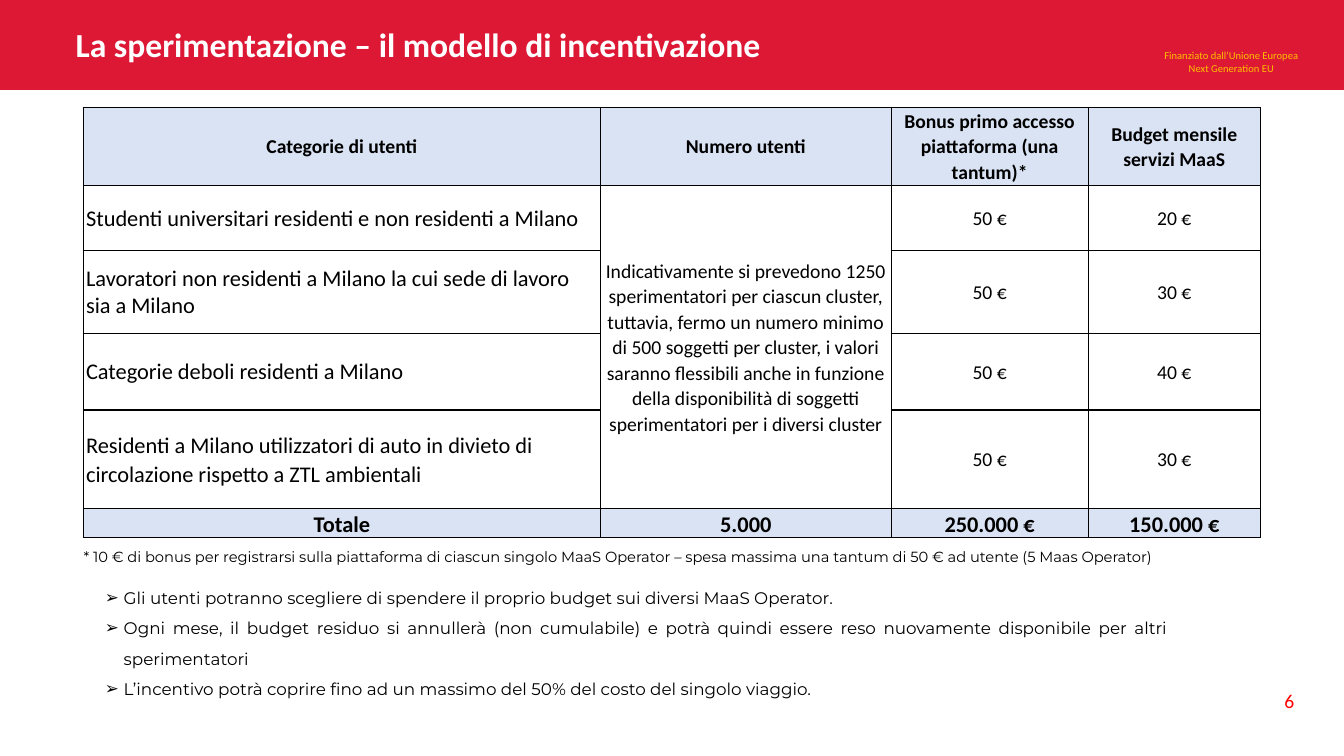
import pptx
import pptx.util
import pptx.dml.color
import pptx.enum.shapes
import pptx.enum.text
import pptx.oxml
import pptx.oxml.ns

Pt = pptx.util.Pt
ALIGN = pptx.enum.text.PP_ALIGN
MIDDLE = pptx.enum.text.MSO_ANCHOR.MIDDLE
RED, BLUE, WHITE, BLACK = "DD1835", "DAE3F3", "FFFFFF", "000000"

HEAD = ["Categorie di utenti", "Numero utenti",
        "Bonus primo accesso piattaforma (una tantum)*",
        "Budget mensile servizi MaaS"]
USERS = ("Indicativamente si prevedono 1250 sperimentatori per ciascun cluster, "
         "tuttavia, fermo un numero minimo di 500 soggetti per cluster, i valori "
         "saranno flessibili anche in funzione della disponibilità di soggetti "
         "sperimentatori per i diversi cluster")
BODY = [
    ["Studenti universitari residenti e non residenti a Milano", USERS, "50 €", "20 €"],
    ["Lavoratori non residenti a Milano la cui sede di lavoro sia a Milano",
     "", "50 €", "30 €"],
    ["Categorie deboli residenti a Milano", "", "50 €", "40 €"],
    ["Residenti a Milano utilizzatori di auto in divieto di circolazione "
     "rispetto a ZTL ambientali", "", "50 €", "30 €"],
]
TOTAL = ["Totale", "5.000", "250.000 €", "150.000 €"]
WIDTHS = [369.4, 207.7, 140.7, 123.1]
HEIGHTS = [15.4, 55.6, 46.8, 59, 54.7, 70.6, 20.2]
NOTE = ("* 10 € di bonus per registrarsi sulla piattaforma di ciascun singolo MaaS "
        "Operator – spesa massima una tantum di 50 € ad utente (5 Maas Operator)")
POINTS = [
    "Gli utenti potranno scegliere di spendere il proprio budget sui diversi MaaS Operator.",
    "Ogni mese, il budget residuo si annullerà (non cumulabile) e potrà quindi "
    "essere reso nuovamente disponibile per altri sperimentatori",
    "L’incentivo potrà coprire fino ad un massimo del 50% del costo del singolo viaggio.",
]


def color(code):
    return pptx.dml.color.RGBColor.from_string(code)


def paint(item, code):
    item.fill.solid()
    item.fill.fore_color.rgb = color(code)


def bullet(para):
    props = para._p.get_or_add_pPr()
    props.set("marL", str(Pt(13.5)))
    props.set("indent", str(-Pt(13.5)))
    space = pptx.oxml.ns.nsdecls("a")
    props.append(pptx.oxml.parse_xml(f'<a:buFont {space} typeface="Arial"/>'))
    props.append(pptx.oxml.parse_xml(f'<a:buChar {space} char="➢"/>'))


def write(frame, lines, size, code, align, font="Calibri", bold=False,
          spacing=None, marked=False):
    frame.word_wrap = True
    frame.text = "\n".join(lines)
    for para in frame.paragraphs:
        para.alignment = align
        if spacing:
            para.line_spacing = spacing
        if marked:
            bullet(para)
        para.font.name = font
        para.font.size = Pt(size)
        para.font.bold = bold
        para.font.color.rgb = color(code)


def place(shape, left, top, width, height):
    shape.left, shape.top = Pt(left), Pt(top)
    shape.width, shape.height = Pt(width), Pt(height)


def add_text(slide, box, lines, size, code, align, inset=True, **style):
    frame = slide.shapes.add_textbox(*map(Pt, box)).text_frame
    if not inset:
        frame.margin_left = frame.margin_right = 0
        frame.margin_top = frame.margin_bottom = 0
    write(frame, lines, size, code, align, **style)


def add_title(slide, text):
    title = slide.shapes.title
    place(title, 46.8, 16.5, 720, 33)
    title.text_frame.vertical_anchor = MIDDLE
    write(title.text_frame, [text], 24, WHITE, ALIGN.LEFT, bold=True, spacing=0.9)


def add_band(slide):
    """Draw the red strip behind the title."""
    band = slide.shapes.add_shape(
        pptx.enum.shapes.MSO_SHAPE.RECTANGLE, 0, Pt(-2), Pt(960), Pt(66.2))
    band.shadow.inherit = False
    band.line.fill.background()
    paint(band, RED)
    slide.shapes.title.element.addprevious(band.element)


def border(cell, sides):
    """Rule the given sides in black and leave the others bare."""
    props = cell._tc.get_or_add_tcPr()
    ink = f'<a:solidFill><a:srgbClr val="{BLACK}"/></a:solidFill>'
    for side in "LRTB":
        line = ink if side in sides else "<a:noFill/>"
        props.append(pptx.oxml.parse_xml(
            f'<a:ln{side} {pptx.oxml.ns.nsdecls("a")} w="{Pt(1)}">{line}</a:ln{side}>'))


def tighten(cell):
    cell.margin_left = cell.margin_right = Pt(2)
    cell.margin_top = cell.margin_bottom = 0
    cell.vertical_anchor = MIDDLE


def fill_cell(cell, text, size, code, align, bold, spacing):
    tighten(cell)
    border(cell, "LRTB")
    paint(cell, code)
    write(cell.text_frame, [text], size, BLACK, align, bold=bold, spacing=spacing)


def clear_row(row):
    """Leave the row above the headings open."""
    for cell in row.cells:
        tighten(cell)
        border(cell, "B")
        cell.fill.background()
        cell.text_frame.paragraphs[0].font.size = Pt(8)


def add_grid(slide):
    rows = [HEAD, *BODY, TOTAL]
    last = len(rows)
    grid = slide.shapes.add_table(
        last + 1, len(WIDTHS), Pt(59.5), Pt(61.4),
        Pt(sum(WIDTHS)), Pt(sum(HEIGHTS))).table
    grid.first_row = grid.horz_banding = False
    for col, width in zip(grid.columns, WIDTHS):
        col.width = Pt(width)
    for row, height in zip(grid.rows, HEIGHTS):
        row.height = Pt(height)
    clear_row(grid.rows[0])
    grid.cell(0, 2).merge(grid.cell(0, 3))
    for y, row in enumerate(rows, 1):
        edge = y in (1, last)
        for x, text in enumerate(row):
            label = x == 0 and not edge
            fill_cell(grid.cell(y, x), text,
                      16 if label or y == last else 14,
                      BLUE if edge else WHITE,
                      ALIGN.LEFT if label else ALIGN.CENTER,
                      edge, 1 if label and y in (3, 4) else 1.07)
    grid.cell(2, 1).merge(grid.cell(last - 1, 1))


def main():
    deck = pptx.Presentation()
    deck.slide_width, deck.slide_height = Pt(960), Pt(540)
    slide = deck.slides.add_slide(deck.slide_layouts[5])
    add_band(slide)
    add_title(slide, "La sperimentazione – il modello di incentivazione")
    add_text(slide, (751, 31.7, 257, 25),
             ["Finanziato dall’Unione Europea", "Next Generation EU"],
             7.5, "FFC000", ALIGN.CENTER)
    add_grid(slide)
    add_text(slide, (59.8, 384.8, 857.5, 48), [NOTE], 10.5, BLACK, ALIGN.JUSTIFY,
             inset=False, font="Montserrat", spacing=1.5)
    add_text(slide, (74.9, 412.6, 759.6, 65.5), POINTS, 12, BLACK, ALIGN.JUSTIFY,
             inset=False, font="Montserrat", spacing=1.5, marked=True)
    add_text(slide, (715.7, 488.9, 216, 28.8), ["6"], 14, "FF0000", ALIGN.RIGHT)
    deck.save("out.pptx")


if __name__ == "__main__":
    main()
